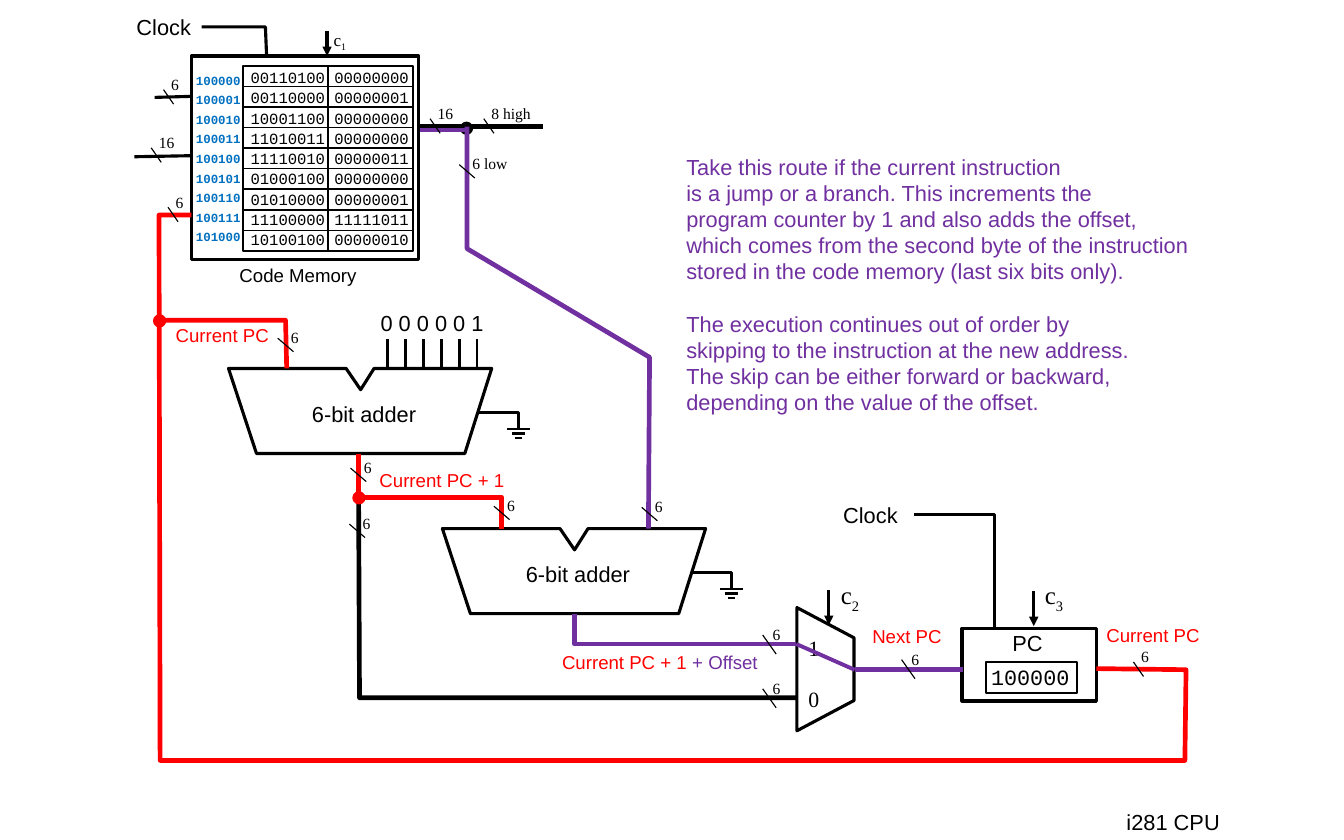
from lxml import etree
from pptx import Presentation
from pptx.dml.color import RGBColor
from pptx.enum.shapes import MSO_CONNECTOR, MSO_SHAPE as SHAPE
from pptx.enum.text import MSO_ANCHOR, PP_ALIGN
from pptx.oxml.ns import qn
from pptx.util import Cm, Pt

BLACK = RGBColor(0x00, 0x00, 0x00)
WHITE = RGBColor(0xFF, 0xFF, 0xFF)
RED = RGBColor(0xFF, 0x00, 0x00)
PURPLE = RGBColor(0x70, 0x30, 0xA0)
BLUE = RGBColor(0x00, 0x70, 0xC0)
SANS, SERIF, MONO = "Arial", "Times New Roman", "Courier New"
UNIT = 2.54  # centimetres in one step of the layout grid

# Code memory: first address and the two bytes of each instruction
FIRST_ADDRESS = 0b100000
CODE = ["00110100 00000000", "00110000 00000001", "10001100 00000000",
        "11010011 00000000", "11110010 00000011", "01000100 00000000",
        "01010000 00000001", "11100000 11111011", "10100100 00000010"]
CELLS = (2.17, 0.59, 1.52, 1.65)

NOTE = [
    "Take this route if the current instruction",
    "is a jump or a branch. This increments the",
    "program counter by 1 and also adds the offset,",
    "which comes from the second byte of the instruction",
    "stored in the code memory (last six bits only).",
    "The execution continues out of order by",
    "skipping to the instruction at the new address.",
    "The skip can be either forward or backward,",
    "depending on the value of the offset.",
]
SECOND_PART = 5  # line of the note that starts its second part

# Labels: box, text, size, font, colour
LABELS = [
    ((9.96, 7.17, 1.04, 0.34), "i281 CPU", 14, SANS, BLACK),
    ((1.12, 0.07, 0.69, 0.34), "Clock", 14, SANS, BLACK),
    ((7.43, 4.43, 0.69, 0.34), "Clock", 14, SANS, BLACK),
    ((2.04, 2.31, 1.3, 0.3), "Code Memory", 12, SANS, BLACK),
    ((3.3, 2.72, 1.13, 0.34), "0 0 0 0 0 1", 14, SANS, BLACK),
    ((8.94, 5.57, 0.48, 0.34), "PC", 14, SANS, BLACK),
    ((8.75, 5.88, 0.91, 0.34), "100000", 14, MONO, BLACK),
    ((1.47, 2.84, 1.04, 0.3), "Current PC", 12, SANS, RED),
    ((3.29, 4.14, 1.33, 0.3), "Current PC + 1", 12, SANS, RED),
    ((7.69, 5.53, 0.83, 0.3), "Next PC", 12, SANS, RED),
    ((9.78, 5.52, 1.04, 0.3), "Current PC", 12, SANS, RED),
]

# Control signals: label box, index, size, arrow from and to
CONTROLS = [
    ((2.88, 0.21, 0.32, 0.29), "1", 11, (2.92, 0.28), (2.92, 0.5)),
    ((7.41, 5.13, 0.38, 0.37), "2", 16, (7.4, 5.27), (7.4, 5.58)),
    ((9.23, 5.13, 0.38, 0.37), "3", 16, (9.23, 5.28), (9.23, 5.59)),
]

# Rectangles: box, line width
FRAMES = [(CELLS, 1.25), ((1.71, 0.5, 2.03, 1.82), 2),
          ((8.8, 5.91, 0.82, 0.28), 1.25), ((8.59, 5.61, 1.2, 0.65), 2)]
ADDERS = [(2.04, 3.29), (3.95, 4.72)]
ADDER_OUTLINE = [(0, 0), (1.05, 0), (1.18, 0.19), (1.3, 0), (2.35, 0),
                 (2.11, 0.76), (0.25, 0.76)]
GROUNDS = [(4.27, 3.68), (6.17, 5.11)]

# Wires: points, width
BLACK_WIRES = [
    ([(1.38, 0.87), (1.72, 0.86)], 2),
    ([(1.2, 1.4), (1.72, 1.39)], 2),
    ([(3.74, 1.13), (4.85, 1.13)], 3),
    ([(3.2, 4.04), (3.21, 6.23), (7.11, 6.23)], 3),
    ([(8.88, 5.61), (8.88, 4.59), (8.16, 4.59)], 2),
    ([(2.38, 0.49), (2.37, 0.24), (1.8, 0.24)], 2),
]
DOTS = [(4.12, 1.1, BLACK), (3.16, 4.4, RED), (1.38, 2.82, RED)]
ROUTE_WIRES = [
    ([(5.79, 4.72), (5.8, 3.19), (4.17, 2.22), (4.17, 1.13)], 3, PURPLE),
    ([(9.79, 5.97), (10.59, 5.98), (10.58, 6.79), (1.43, 6.79),
      (1.42, 1.92), (1.71, 1.92)], 3, RED),
    ([(5.13, 5.48), (5.13, 5.75), (7.11, 5.75)], 3, PURPLE),
    ([(7.63, 5.98), (8.6, 5.98)], 3, PURPLE),
    ([(2.56, 3.29), (2.55, 2.86), (1.42, 2.86)], 3, RED),
    ([(4.48, 4.72), (4.48, 4.44), (3.2, 4.44)], 3, RED),
    ([(7.11, 5.75), (7.63, 5.98)], 2.5, PURPLE),
    ([(3.2, 4.05), (3.2, 4.49)], 3, RED),
    ([(3.75, 1.16), (4.16, 1.16)], 3, PURPLE),
]

# Bus widths: slash size and label offset by style, then slash start and label
SLASHES = {"steep": (0.09, 0.13, -0.03, -0.18),
           "flat": (0.14, 0.12, 0.02, -0.14),
           "tall": (0.12, 0.17, -0.01, -0.14)}
BUSES = [
    ("steep", [(1.46, 0.8, "6"), (1.5, 1.85, "6"), (1.35, 1.32, "16"),
               (3.84, 1.06, "16"), (4.32, 1.06, "8 high"), (10.12, 5.91, "6")]),
    ("flat", [(4.1, 1.47, "6 low"), (3.13, 4.18, "6"), (3.12, 4.68, "6"),
              (5.73, 4.53, "6"), (4.41, 4.52, "6"), (2.48, 3.02, "6")]),
    ("tall", [(8.05, 5.89, "6"), (6.81, 5.67, "6"), (6.81, 6.15, "6")]),
]
BUS_LABEL_WIDTH = {"6": 0.27, "16": 0.34, "6 low": 0.52, "8 high": 0.56}

deck = Presentation()
deck.slide_width, deck.slide_height = Cm(12 * UNIT), Cm(7.5 * UNIT)
slide = deck.slides.add_slide(deck.slide_layouts[6])
shapes = slide.shapes


def grid(*values):
    return [Cm(value * UNIT) for value in values]


def paint(shape, line, width, fill=None):
    shape.shadow.inherit = False
    shape.line.color.rgb, shape.line.width = line, Pt(width)
    if fill is None:
        shape.fill.background()
    else:
        shape.fill.solid()
        shape.fill.fore_color.rgb = fill
    return shape


def add_run(paragraph, words, size, font, color, **extra):
    run = paragraph.add_run()
    run.text = words
    run.font.color.rgb = color
    for key, value in {"size": Pt(size), "name": font, **extra}.items():
        setattr(run.font, key, value)
    return run


def write(box, lines, size, font, color, before=0, wrap=False, **extra):
    frame = shapes.add_textbox(*grid(*box)).text_frame
    frame.word_wrap = wrap
    for i, words in enumerate(lines):
        paragraph = frame.paragraphs[0] if i == 0 else frame.add_paragraph()
        paragraph.space_before = Pt(before)
        add_run(paragraph, words, size, font, color, **extra)
    return frame


def outline(points, close):
    start, *rest = [tuple(grid(*point)) for point in points]
    builder = shapes.build_freeform(*start, scale=1.0)
    builder.add_line_segments(rest, close=close)
    return builder.convert_to_shape()


def wire(points, width, color=BLACK, arrow=False):
    if len(points) > 2:
        paint(outline(points, False), color, width)
        return
    (x1, y1), (x2, y2) = points
    line = shapes.add_connector(MSO_CONNECTOR.STRAIGHT, *grid(x1, y1, x2, y2))
    line.line.color.rgb, line.line.width = color, Pt(width)
    if arrow:
        etree.SubElement(line.line._get_or_add_ln(), qn("a:tailEnd"),
                         type="triangle", w="sm" if width > 2 else "med")
    etree.SubElement(line._element.spPr, qn("a:effectLst"))


# Code memory and program counter
for box, width in FRAMES:
    paint(shapes.add_shape(SHAPE.RECTANGLE, *grid(*box)), BLACK, width)
left, top, cells_w, cells_h = CELLS
wire([(left + cells_w / 2, top), (left + cells_w / 2, top + cells_h)], 1)
for row in range(1, len(CODE)):
    y = top + row * cells_h / len(CODE)
    wire([(left, y), (left + cells_w, y)], 1)
addresses = [f"{FIRST_ADDRESS + i:06b}" for i in range(len(CODE))]
write((1.65, 0.6, 0.72, 1.65), addresses, 8, MONO, BLUE, before=3, wrap=True, bold=True)
write((2.14, 0.56, 1.63, 1.73), CODE, 10, MONO, BLACK, before=1)

# Adders with their grounds
for x, y in ADDERS:
    adder = paint(outline([(x + dx, y + dy) for dx, dy in ADDER_OUTLINE], True),
                  BLACK, 2, WHITE)
    frame = adder.text_frame
    frame.vertical_anchor = MSO_ANCHOR.MIDDLE
    frame.margin_left, frame.margin_top = grid(0.17, 0.09)
    name = frame.paragraphs[0]
    name.alignment = PP_ALIGN.CENTER
    add_run(name, "6-bit adder", 14, SANS, BLACK)
for x, y in GROUNDS:
    stem = x + 0.36
    wire([(x, y), (stem, y), (stem, y + 0.15)], 1.75)
    for i, half in enumerate((0.1, 0.06, 0.03)):
        bar = y + 0.15 + 0.04 * i
        wire([(stem - half, bar), (stem + half, bar)], 1.5)
for bit in range(6):
    x = 3.46 + 0.16 * bit
    wire([(x, 3.03), (x, 3.29)], 1.75)

# Multiplexer
mux = paint(shapes.add_shape(SHAPE.TRAPEZOID, *grid(6.82, 5.72, 1.1, 0.51)), BLACK, 2, WHITE)
mux.rotation, mux.adjustments[0] = 90, 0.53
inputs = write((7.12, 5.62, 0.48, 0.78), "10", 14, SERIF, BLACK, wrap=True)
inputs.paragraphs[1].space_before = Pt(16)

# Wires and junctions
for points, width in BLACK_WIRES:
    wire(points, width)
for x, y, color in DOTS:
    paint(shapes.add_shape(SHAPE.OVAL, *grid(x, y, 0.09, 0.09)), color, 2, color)
for points, width, color in ROUTE_WIRES:
    wire(points, width, color)
for style, marks in BUSES:
    dx, dy, label_dx, label_dy = SLASHES[style]
    for x, y, label in marks:
        wire([(x, y), (x + dx, y + dy)], 0.75)
        write((x + label_dx, y + label_dy, BUS_LABEL_WIDTH[label], 0.27),
              [label], 10, SERIF, BLACK)

# Control signals
for box, index, size, start, end in CONTROLS:
    wire([start, end], 2, arrow=True)
    signal = write(box, ["c"], size, SERIF, BLACK).paragraphs[0]
    subscript = add_run(signal, index, size, SERIF, BLACK)
    subscript._r.get_or_add_rPr().set("baseline", "-25000")

# Labels and note
for box, words, *style in LABELS:
    write(box, [words], *style)
target = write((4.92, 5.76, 1.97, 0.3), ["Current PC + 1 "], 12, SANS, RED)
add_run(target.paragraphs[0], "+ Offset", 12, SANS, PURPLE)
note = write((6.03, 1.32, 4.76, 2.46), NOTE, 14, SANS, PURPLE)
note.paragraphs[SECOND_PART].space_before = Pt(17)

deck.save("out.pptx")
